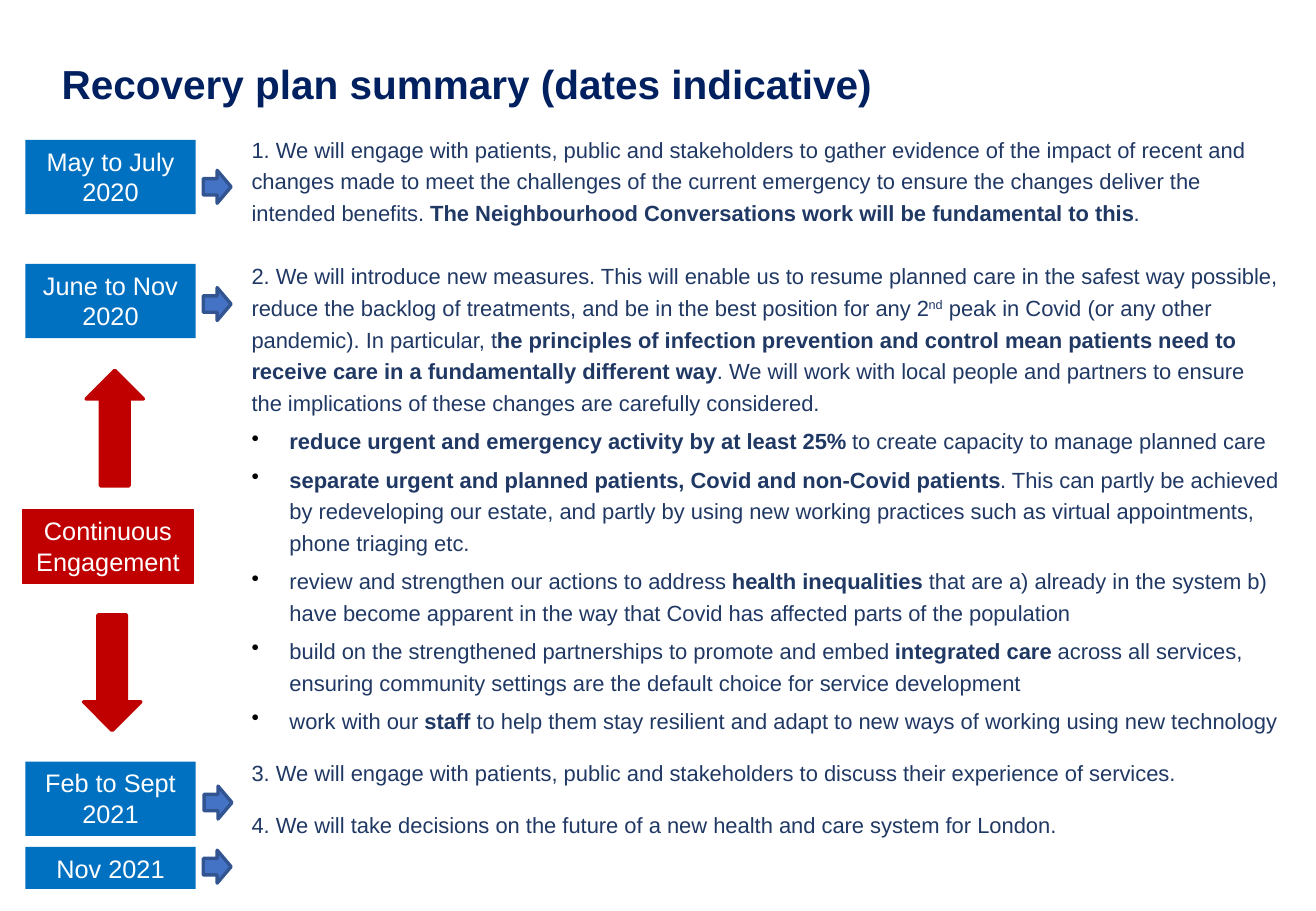
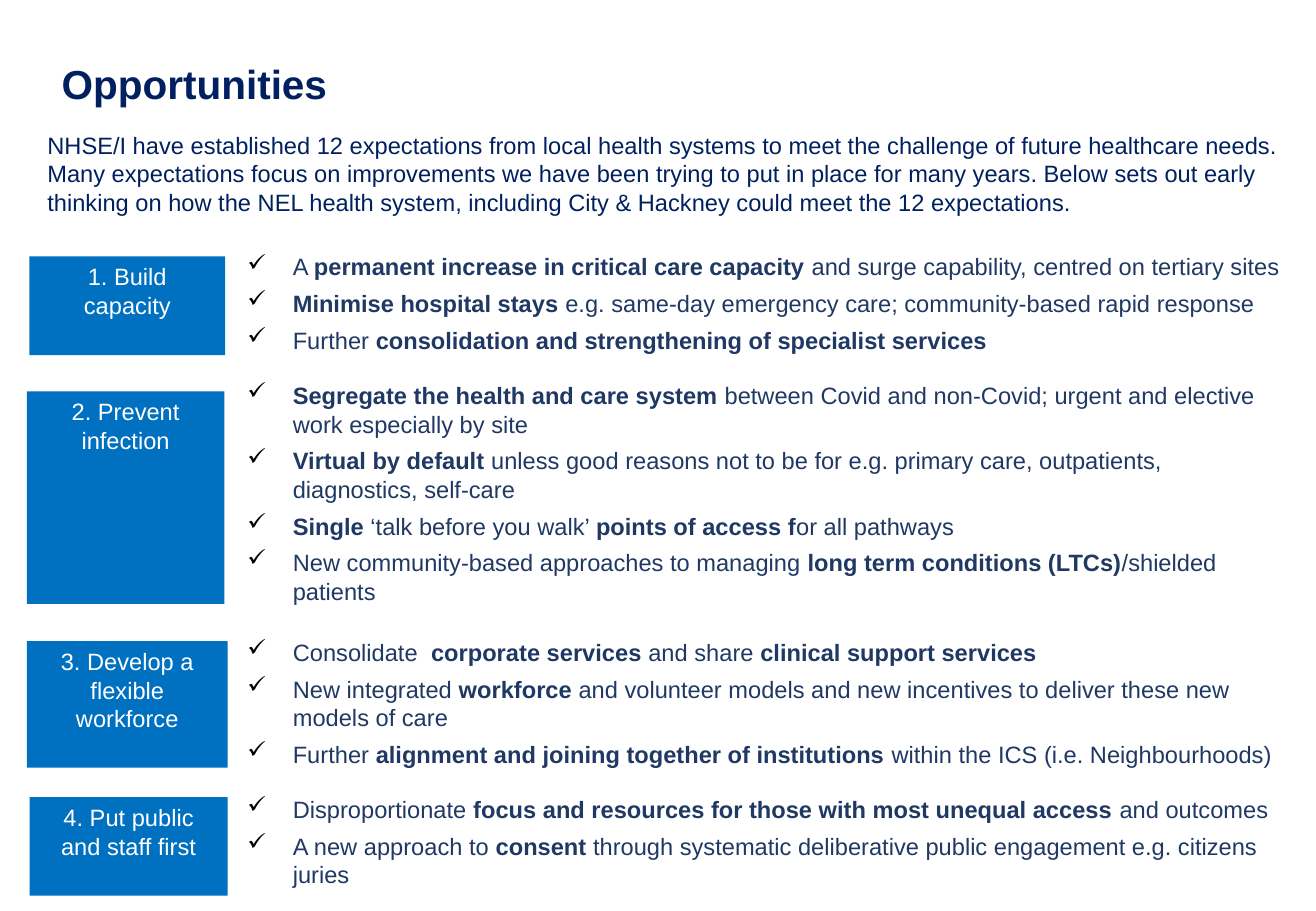
from lxml import etree
from pptx import Presentation
from pptx.dml.color import RGBColor
from pptx.enum.shapes import MSO_SHAPE
from pptx.enum.text import MSO_ANCHOR, PP_ALIGN
from pptx.oxml.ns import qn
from pptx.util import Pt

NAVY, TEXT, BLACK, WHITE = "002060", "203864", "000000", "FFFFFF"
BLUE, RED = "0070C0", "C00000"
ARROW_BLUE, ARROW_EDGE = "4472C4", "325491"


def rgb(value):
    return RGBColor.from_string(value)


class Deck:
    """Holds the presentation, its style and the current slide."""

    font = "Arial"

    def __init__(self, width, height):
        self.prs = Presentation()
        self.prs.slide_width, self.prs.slide_height = Pt(width), Pt(height)
        self.s = None

    def slide(self, title):
        self.s = self.prs.slides.add_slide(self.prs.slide_layouts[6])
        tf = self.text_frame(29.5, 29, 672.5, 45)
        tf.vertical_anchor = MSO_ANCHOR.MIDDLE
        self.paragraph(tf, f"**{title}**", 24, NAVY, line=0.9)

    def text_frame(self, x, y, w, h):
        tf = self.s.shapes.add_textbox(Pt(x), Pt(y), Pt(w), Pt(h)).text_frame
        tf.word_wrap = True
        return tf

    def paragraph(self, tf, text, size, color, line=1.0, before=0, after=0,
                  bullet=None, indent=0):
        """Add a paragraph; **text** is bold and ^text^ is superscript."""
        p = tf.paragraphs[0]
        if p.runs:
            p = tf.add_paragraph()
        p.line_spacing = line
        p.space_before, p.space_after = Pt(before), Pt(after)
        if bullet:
            self.bullet(p, bullet, indent)
        for i, part in enumerate(text.split("**")):
            for j, piece in enumerate(part.split("^")):
                if piece:
                    r = p.add_run()
                    r.text = piece
                    r.font.name, r.font.size = self.font, Pt(size)
                    r.font.bold = i % 2 == 1
                    r.font.color.rgb = rgb(color)
                    if j % 2:
                        r._r.get_or_add_rPr().set("baseline", "30000")
        return p

    def bullet(self, p, char, indent):
        pPr = p._p.get_or_add_pPr()
        pPr.set("marL", str(Pt(indent)))
        pPr.set("indent", str(-Pt(indent)))
        clr = etree.SubElement(pPr, qn("a:buClr"))
        etree.SubElement(clr, qn("a:srgbClr")).set("val", BLACK)
        etree.SubElement(pPr, qn("a:buChar")).set("char", char)

    def shape(self, kind, x, y, w, h, fill, edge=None, weight=2):
        sp = self.s.shapes.add_shape(kind, Pt(x), Pt(y), Pt(w), Pt(h))
        sp.shadow.inherit = False
        sp.fill.solid()
        sp.fill.fore_color.rgb = rgb(fill)
        if edge:
            sp.line.color.rgb = rgb(edge)
            sp.line.width = Pt(weight)
        else:
            sp.line.fill.background()
        return sp

    def label(self, text, x, y, w, h, size, fill=BLUE, edge=None):
        sp = self.shape(MSO_SHAPE.RECTANGLE, x, y, w, h, fill, edge, 0.75)
        tf = sp.text_frame
        tf.word_wrap = True
        tf.vertical_anchor = MSO_ANCHOR.TOP
        self.paragraph(tf, text, size, WHITE).alignment = PP_ALIGN.CENTER

    def pointer(self, x, y):
        self.shape(MSO_SHAPE.RIGHT_ARROW, x, y, 16.5, 19.5, ARROW_BLUE, ARROW_EDGE)

    def engagement_arrow(self, x, y, rotation=0):
        sp = self.shape(MSO_SHAPE.DOWN_ARROW, x, y, 34, 68.5, RED, RED)
        sp.rotation = rotation


# text, space before, bulleted
PLAN = [
    ("1. We will engage with patients, public and stakeholders to gather evidence of the "
     "impact of recent and changes made to meet the challenges of the current emergency to "
     "ensure the changes deliver the intended benefits. **The Neighbourhood Conversations "
     "work will be fundamental to this**.", 4, False),
    ("2. We will introduce new measures. This will enable us to resume planned care in the "
     "safest way possible, reduce the backlog of treatments, and be in the best position for "
     "any 2^nd^ peak in Covid (or any other pandemic). In particular, t**he principles of "
     "infection prevention and control mean patients need to receive care in a fundamentally "
     "different way**. We will work with local people and partners to ensure the implications "
     "of these changes are carefully considered.", 19, False),
    ("**reduce urgent and emergency activity by at least 25% **to create capacity to manage "
     "planned care", 4, True),
    ("**separate urgent and planned patients, Covid and non-Covid patients**. This can partly "
     "be achieved by redeveloping our estate, and partly by using new working practices such "
     "as virtual appointments, phone triaging etc.", 4, True),
    ("review and strengthen our actions to address **health inequalities **that are a) already "
     "in the system b) have become apparent in the way that Covid has affected parts of the "
     "population", 4, True),
    ("build on the strengthened partnerships to promote and embed **integrated care **across "
     "all services, ensuring community settings are the default choice for service "
     "development", 4, True),
    ("work with our **staff** to help them stay resilient and adapt to new ways of working "
     "using new technology", 4, True),
    ("3. We will engage with patients, public and stakeholders to discuss their experience of "
     "services.", 12, False),
    ("4. We will take decisions on the future of a new health and care system for London.",
     12, False),
]

# text, top, height, pointer left, pointer top
PERIODS = [
    ("May to July 2020", 83, 44, 120.5, 101),
    ("June to Nov 2020", 156.5, 44, 120.5, 170.5),
    ("Feb to Sept 2021", 451.5, 44, 121, 466),
    ("Nov 2021", 502, 25, 120.5, 504),
]

INTRO = ("NHSE/I have established 12 expectations from local health systems to meet the "
         "challenge of future healthcare needs. Many expectations focus on improvements we "
         "have been trying to put in place for many years. Below sets out early thinking on "
         "how the NEL health system, including City & Hackney could meet the 12 expectations.")

# label, box (left, top, width, height), space before the group, points
THEMES = [
    ("1. Build capacity", (17.5, 152, 116, 58.5), 0, [
        "A **permanent increase in critical care capacity **and surge capability, centred on "
        "tertiary sites",
        "**Minimise hospital stays **e.g. same-day emergency care; community-based rapid "
        "response",
        "Further **consolidation and strengthening of specialist services**",
    ]),
    ("2. Prevent infection", (16, 232, 117, 126), 11, [
        "**Segregate the health and care system **between Covid and non-Covid; urgent and "
        "elective work especially by site",
        "**Virtual by default **unless good reasons not to be for e.g. primary care, "
        "outpatients, diagnostics, self-care",
        "**Single** ‘talk before you walk’ **points of access f**or all pathways",
        "New community-based approaches to managing **long term conditions (LTCs)**/shielded "
        "patients",
    ]),
    ("3. Develop a flexible workforce", (16, 380, 119, 75), 14.5, [
        "Consolidate  **corporate services **and share **clinical support services**",
        "New integrated **workforce **and volunteer models and new incentives to deliver "
        "these new models of care",
        "Further **alignment and joining together of institutions **within the ICS (i.e. "
        "Neighbourhoods)",
    ]),
    ("4. Put public and staff first", (17.5, 472.5, 117.5, 58.5), 11, [
        "Disproportionate **focus and resources for those with most unequal access **and "
        "outcomes",
        "A new approach to **consent **through systematic deliberative public engagement "
        "e.g. citizens juries",
    ]),
]


def plan_slide(deck):
    deck.slide("Recovery plan summary (dates indicative)")
    tf = deck.text_frame(142, 74, 624, 466)
    for text, before, bulleted in PLAN:
        deck.paragraph(tf, text, 13, TEXT, line=1.2, before=before,
                       bullet="•" if bulleted else None, indent=22.5)
    for text, top, height, pointer_x, pointer_y in PERIODS:
        deck.label(text, 15, top, 101, height, 15)
        deck.pointer(pointer_x, pointer_y)
    deck.label("Continuous Engagement", 13.5, 302, 101, 44, 15, RED, RED)
    deck.engagement_arrow(49.5, 364.5)
    deck.engagement_arrow(51, 219.5, 180)


def opportunities_slide(deck):
    deck.slide("Opportunities")
    deck.paragraph(deck.text_frame(21, 74, 745, 85), INTRO, 14, NAVY, after=10)
    tf = deck.text_frame(139.5, 146, 628, 388)
    for label, box, gap, points in THEMES:
        deck.label(label, *box, 14)
        for i, text in enumerate(points):
            deck.paragraph(tf, text, 14, TEXT, before=0 if i else gap, after=5,
                           bullet="✓", indent=27)


def main():
    deck = Deck(780, 540)
    plan_slide(deck)
    opportunities_slide(deck)
    deck.prs.save("out.pptx")


if __name__ == "__main__":
    main()
